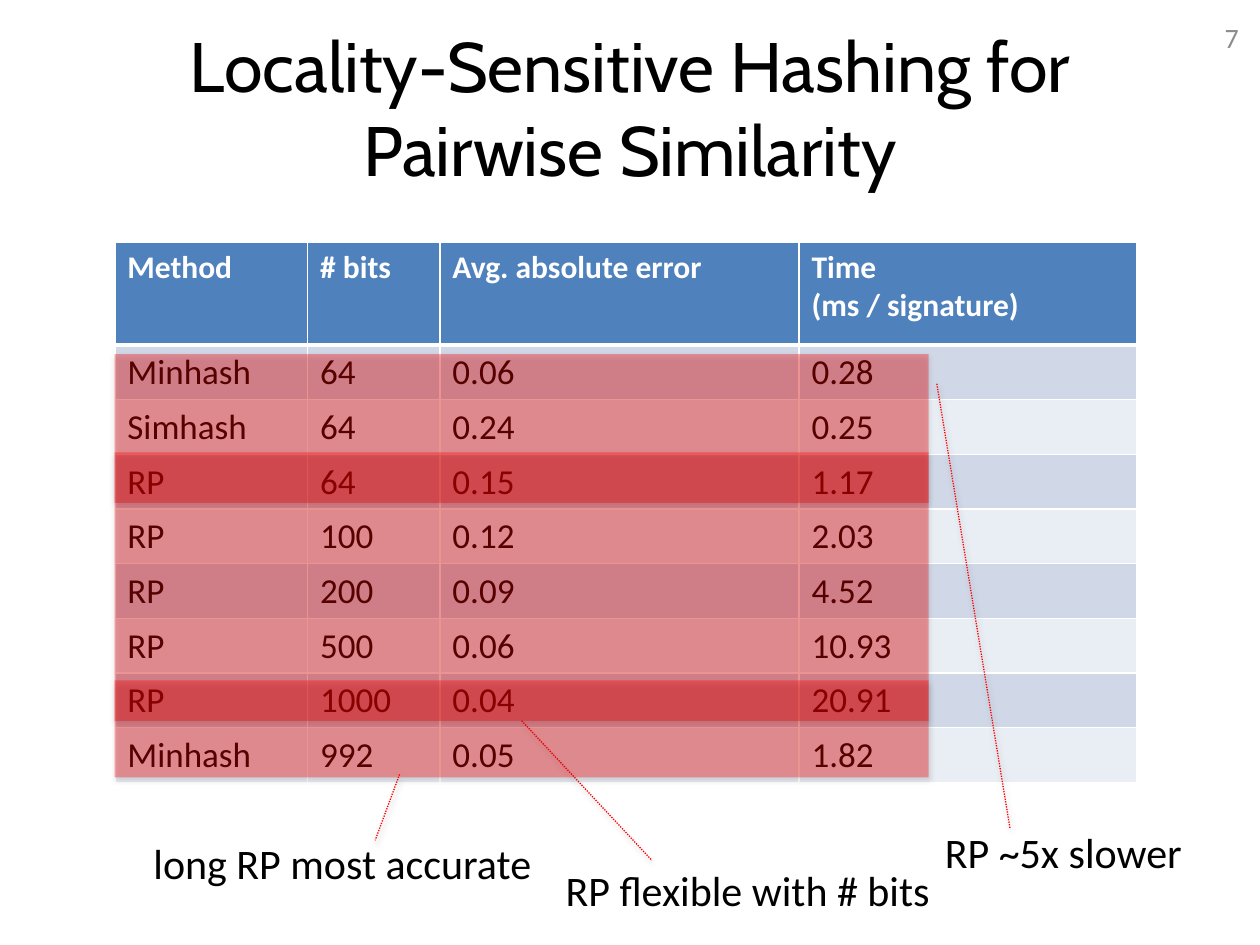
"""Build the slide on locality-sensitive hashing for pairwise similarity."""
from lxml.etree import SubElement
from pptx import Presentation
from pptx.dml.color import RGBColor
from pptx.enum.dml import MSO_LINE
from pptx.enum.shapes import MSO_SHAPE as Preset
from pptx.enum.text import MSO_ANCHOR as Anchor, MSO_AUTO_SIZE as AutoSize, PP_ALIGN as Align
from pptx.oxml.ns import qn
from pptx.util import Pt

BLACK = RGBColor(0x00, 0x00, 0x00)
WHITE = RGBColor(0xFF, 0xFF, 0xFF)
GRAY = RGBColor(0x8C, 0x8C, 0x8C)
RED = RGBColor(0xFF, 0x00, 0x00)
HEADER_BLUE = RGBColor(0x4F, 0x81, 0xBD)
BANDS = [RGBColor(0xE9, 0xED, 0xF4), RGBColor(0xD0, 0xD8, 0xE8)]

COLUMN_WIDTHS = [110.2, 75.6, 205.2, 193]
HEADER_HEIGHT, ROW_HEIGHT = 59, 31.2
TABLE_LEFT, TABLE_TOP = 65.6, 138.2
ROWS = [
    ["Method", "# bits", "Avg. absolute error", "Time\n(ms / signature)"],
    ["Minhash", "64", "0.06", "0.28"],
    ["Simhash", "64", "0.24", "0.25"],
    ["RP", "64", "0.15", "1.17"],
    ["RP", "100", "0.12", "2.03"],
    ["RP", "200", "0.09", "4.52"],
    ["RP", "500", "0.06", "10.93"],
    ["RP", "1000", "0.04", "20.91"],
    ["Minhash", "992", "0.05", "1.82"],
]
CALLOUTS = [
    (202.3, 85, (0.2, 1.01, 3.19, 1.1), "RP ~5x slower", (532.8, 468.7, 159.8)),
    (258.5, 153.4, (1, 0.5, 1.52, 0.66), "RP flexible with # bits", (316.1, 490.3, 229.7)),
    (388.8, 55.4, (0.97, 0.35, 1.65, 0.32), "long RP most accurate", (80.6, 475.2, 235.4)),
]


def style_text(text_frame, size, color, font="Calibri", align=Align.LEFT, bold=False):
    for paragraph in text_frame.paragraphs:
        paragraph.alignment = align
        for run in paragraph.runs:
            run.font.name = font
            run.font.size = Pt(size)
            run.font.bold = bold
            run.font.color.rgb = color


def add_text(shapes, text, left, top, width, height, wrap=True):
    text_frame = shapes.add_textbox(Pt(left), Pt(top), Pt(width), Pt(height)).text_frame
    text_frame.text = text
    text_frame.word_wrap = wrap
    return text_frame


presentation = Presentation()
presentation.slide_width, presentation.slide_height = Pt(720), Pt(540)
slide = presentation.slides.add_slide(presentation.slide_layouts[6])

number = add_text(slide.shapes, "7", 547.2, 7.2, 167.8, 28.8)
number.vertical_anchor = Anchor.MIDDLE
style_text(number, 16, GRAY, align=Align.RIGHT)

table = slide.shapes.add_table(
    len(ROWS), len(COLUMN_WIDTHS), Pt(TABLE_LEFT), Pt(TABLE_TOP),
    Pt(sum(COLUMN_WIDTHS)), Pt(HEADER_HEIGHT + ROW_HEIGHT * (len(ROWS) - 1)),
).table
for column, width in zip(table.columns, COLUMN_WIDTHS):
    column.width = Pt(width)
for row_index, values in enumerate(ROWS):
    is_header = row_index == 0
    table.rows[row_index].height = Pt(HEADER_HEIGHT if is_header else ROW_HEIGHT)
    for column_index, value in enumerate(values):
        cell = table.cell(row_index, column_index)
        cell.text_frame.text = value
        style_text(cell.text_frame, 18 if is_header else 20,
                   WHITE if is_header else BLACK, bold=is_header)
        properties = cell._tc.get_or_add_tcPr()
        for side in "LRTB":
            is_thick = (row_index, side) in [(0, "B"), (1, "T")]
            border = SubElement(properties, qn(f"a:ln{side}"), w=str(Pt(3 if is_thick else 1)))
            SubElement(SubElement(border, qn("a:solidFill")), qn("a:srgbClr"), val=str(WHITE))
        cell.fill.solid()
        cell.fill.fore_color.rgb = HEADER_BLUE if is_header else BANDS[row_index % 2]

for top, height, adjustments, label, (left, label_top, width) in CALLOUTS:
    group = slide.shapes.add_group_shape()
    callout = group.shapes.add_shape(
        Preset.LINE_CALLOUT_1_NO_BORDER, Pt(TABLE_LEFT), Pt(top), Pt(465.1), Pt(height))
    for index, adjustment in enumerate(adjustments):
        callout.adjustments[index] = adjustment
    callout.fill.solid()
    callout.fill.fore_color.rgb = RED
    callout.line.color.rgb = RED
    callout.line.width = Pt(0.75)
    callout.line.dash_style = MSO_LINE.ROUND_DOT
    callout.shadow.inherit = False
    properties = callout._element.spPr
    fill_color = properties.find(qn("a:solidFill")).find(qn("a:srgbClr"))
    SubElement(fill_color, qn("a:alpha"), val="34000")
    shadow = SubElement(properties.find(qn("a:effectLst")), qn("a:outerShdw"),
                        blurRad=str(Pt(3.1)), dist=str(Pt(1.8)), dir="5400000", rotWithShape="0")
    shadow_color = SubElement(shadow, qn("a:srgbClr"), val=str(BLACK))
    SubElement(shadow_color, qn("a:alpha"), val="35000")

    label_frame = add_text(group.shapes, label, left, label_top, width, 36, wrap=False)
    label_frame.auto_size = AutoSize.SHAPE_TO_FIT_TEXT
    style_text(label_frame, 24, BLACK)

title = add_text(slide.shapes, "Locality-Sensitive Hashing for Pairwise Similarity",
                 36, 15.8, 648, 90)
title.vertical_anchor = Anchor.MIDDLE
style_text(title, 40, BLACK, font="Cabin", align=Align.CENTER)

presentation.save("out.pptx")
